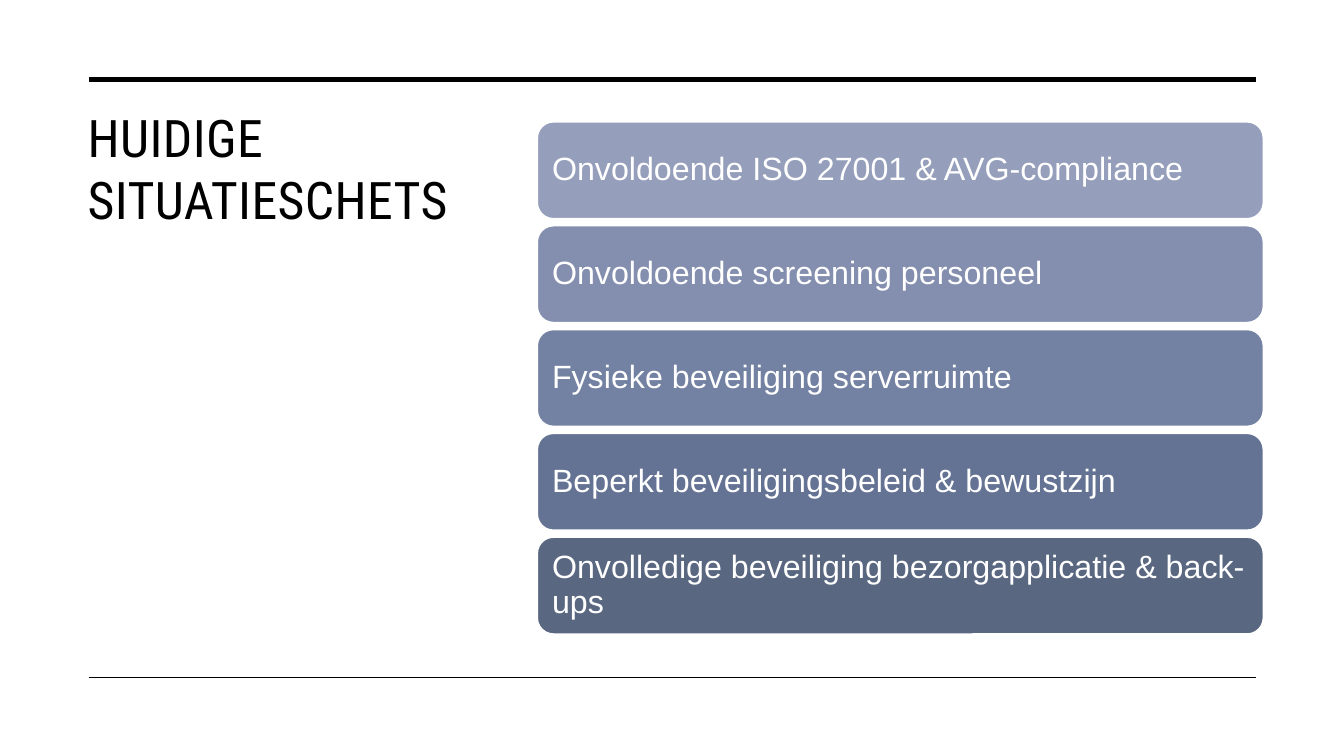
from pptx import Presentation
from pptx.dml.color import RGBColor
from pptx.enum.shapes import MSO_CONNECTOR, MSO_SHAPE
from pptx.enum.text import MSO_ANCHOR, MSO_AUTO_SIZE, PP_ALIGN
from pptx.oxml.ns import qn
from pptx.util import Inches, Pt

LEFT = PP_ALIGN.LEFT
TOP, MIDDLE = MSO_ANCHOR.TOP, MSO_ANCHOR.MIDDLE
NO_FIT = MSO_AUTO_SIZE.NONE
ROUNDED = MSO_SHAPE.ROUNDED_RECTANGLE
STRAIGHT = MSO_CONNECTOR.STRAIGHT

ISSUES = [
    ("Onvoldoende ISO 27001 & AVG-compliance", "959EBB"),
    ("Onvoldoende screening personeel", "848FAF"),
    ("Fysieke beveiliging serverruimte", "7381A2"),
    ("Beperkt beveiligingsbeleid & bewustzijn", "647394"),
    ("Onvolledige beveiliging bezorgapplicatie & back-ups", "596781"),
]


def rgb(value):
    return RGBColor.from_string(value)


class SlideBuilder:
    """Draws styled elements on the current slide."""

    heading_font = "Roboto Condensed"
    body_font = "Arial"
    black = "000000"
    white = "FFFFFF"

    def __init__(self, s):
        self.s = s
        s.background.fill.solid()
        s.background.fill.fore_color.rgb = rgb(self.white)

    def text(self, sp, text, font, size, color, anchor, spacing):
        tf = sp.text_frame
        tf.text = text
        tf.word_wrap = True
        tf.auto_size = NO_FIT
        tf.vertical_anchor = anchor
        p = tf.paragraphs[0]
        p.alignment = LEFT
        p.line_spacing = spacing
        p.font.name = font
        p.font.size = Pt(size)
        p.font.color.rgb = rgb(color)
        return p

    def title(self, text, x, y, w, h):
        sp = self.s.shapes.title
        sp.left, sp.top, sp.width, sp.height = map(Inches, (x, y, w, h))
        p = self.text(sp, text, self.heading_font, 37, self.black, TOP, 1.0)
        p.runs[0].font._element.set("spc", "30")

    def rule(self, x1, x2, y, weight):
        line = self.s.shapes.add_connector(
            STRAIGHT, Inches(x1), Inches(y), Inches(x2), Inches(y))
        line.line.color.rgb = rgb(self.black)
        line.line.width = Pt(weight)
        spPr = line._element.spPr
        spPr.append(spPr.makeelement(qn("a:effectLst"), {}))

    def bar(self, text, fill, x, y, w, h):
        sp = self.s.shapes.add_shape(
            ROUNDED, Inches(x), Inches(y), Inches(w), Inches(h))
        sp.shadow.inherit = False
        sp.fill.solid()
        sp.fill.fore_color.rgb = rgb(fill)
        sp.line.color.rgb = rgb(self.white)
        sp.line.width = Pt(1)
        self.text(sp, text, self.body_font, 23, self.white, MIDDLE, 0.9)
        tf = sp.text_frame
        tf.margin_left = tf.margin_right = Inches(0.1)
        tf.margin_top = tf.margin_bottom = Inches(0.1)


def main():
    prs = Presentation()
    prs.slide_width, prs.slide_height = Inches(13.33), Inches(7.5)
    slide = SlideBuilder(prs.slides.add_slide(prs.slide_layouts[5]))
    slide.title("HUIDIGE SITUATIESCHETS", 0.77, 1, 4, 4.82)
    for y, weight in ((0.79, 3.5), (6.72, 1)):
        slide.rule(0.88, 12.46, y, weight)
    for i, (issue, fill) in enumerate(ISSUES):
        slide.bar(issue, fill, 5.33, 1.21 + i * 1.03, 7.2, 0.96)
    prs.save("out.pptx")


if __name__ == "__main__":
    main()
